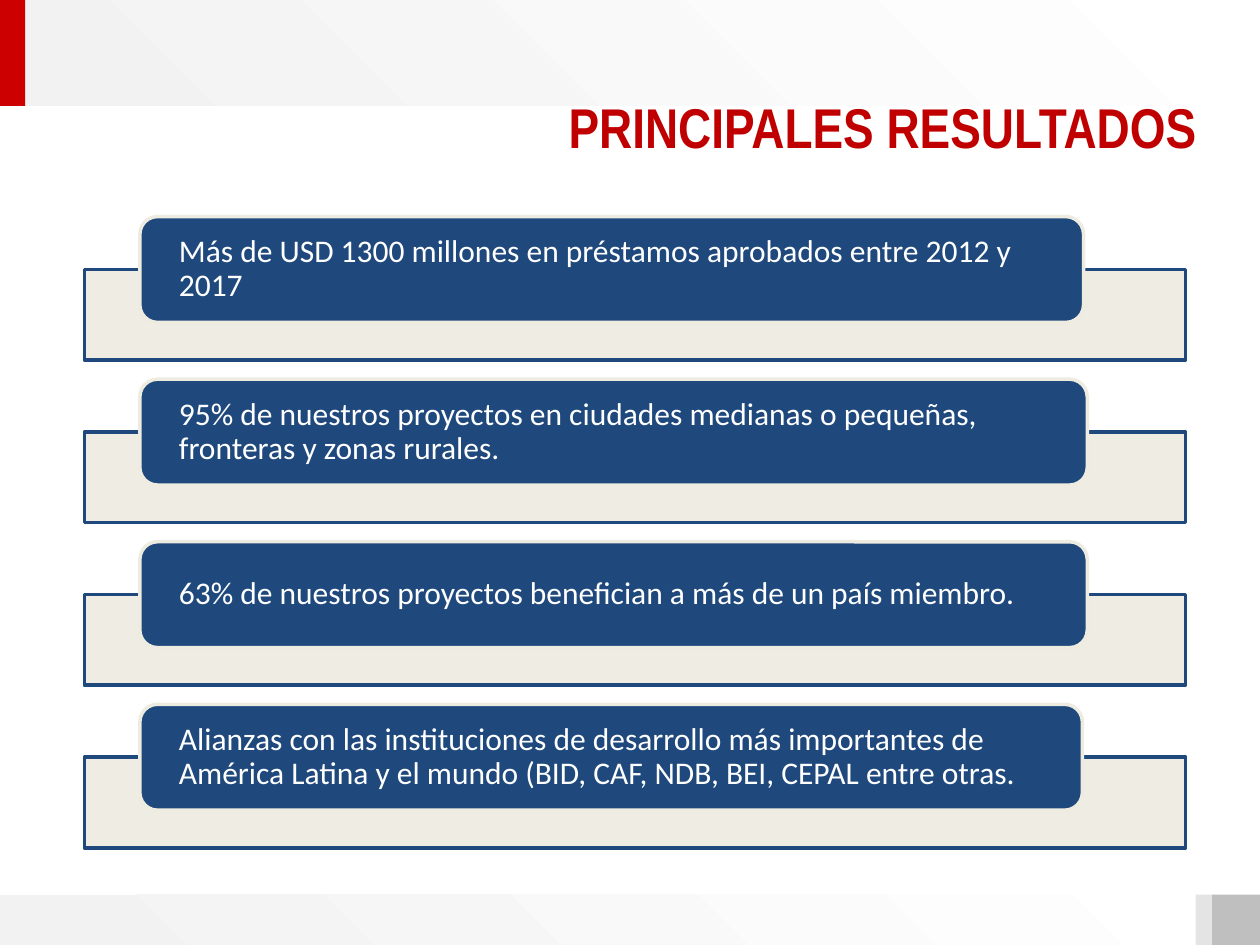
from lxml import etree
from pptx import Presentation
from pptx.dml.color import RGBColor
from pptx.enum.shapes import MSO_SHAPE
from pptx.enum.text import MSO_ANCHOR, MSO_AUTO_SIZE, PP_ALIGN
from pptx.oxml.ns import qn
from pptx.util import Pt

RECTANGLE, ROUNDED = MSO_SHAPE.RECTANGLE, MSO_SHAPE.ROUNDED_RECTANGLE
TITLE_ONLY = 5

COLORS = {
    "white": "FFFFFF", "pale": "F2F2F2", "red": "CC0000", "title": "C00000",
    "gray": "BFBFBF", "light_gray": "E4E4E4", "navy": "1F497D", "cream": "EEECE1",
}

# Content: result text and width of its card
TITLE = "PRINCIPALES RESULTADOS"
RESULTS = [
    ("Más de USD 1300 millones en préstamos aprobados entre 2012 y 2017", 539.3),
    ("95% de nuestros proyectos en ciudades medianas o pequeñas, fronteras y zonas rurales.", 541.4),
    ("63% de nuestros proyectos benefician a más de un país miembro.", 541.4),
    ("Alianzas con las instituciones de desarrollo más importantes de América Latina y el mundo "
     "(BID, CAF, NDB, BEI, CEPAL entre otras.", 538.6),
]

# Bands: left, top, width, height, fill (None is the pale gradient)
BANDS = [
    (13.7, 0, 706.3, 60.5, None),
    (-0.7, 0, 15.1, 60.5, "red"),
    (0, 511.2, 720, 28.8, None),
    (692.6, 511.2, 27.4, 28.8, "gray"),
    (683.3, 511.2, 9.3, 28.8, "light_gray"),
]

# Layout of the result rows
FIRST_TOP, ROW_STEP = 123.8, 92.9
CARD_LEFT, CARD_HEIGHT, CARD_INSET = 79.9, 60.5, 19.4
PANEL_LEFT, PANEL_DROP, PANEL_WIDTH, PANEL_HEIGHT = 48.2, 30.2, 629.3, 51.8


def color(name):
    return RGBColor.from_string(COLORS[name])


def add_box(slide, kind, left, top, width, height, fill=None, line=None):
    shape = slide.shapes.add_shape(kind, Pt(left), Pt(top), Pt(width), Pt(height))
    shape.shadow.inherit = False
    if fill:
        shape.fill.solid()
        shape.fill.fore_color.rgb = color(fill)
    else:
        shape.fill.gradient()
        shape.fill.gradient_angle = 45
        for stop, name in zip(shape.fill.gradient_stops, ("pale", "white")):
            stop.color.rgb = color(name)
    if line:
        shape.line.color.rgb = color(line)
        shape.line.width = Pt(2)
    else:
        shape.line.fill.background()
    return shape


def set_opacity(shape, percent):
    fill_color = shape.fill._xPr.find(qn("a:solidFill"))[0]
    etree.SubElement(fill_color, qn("a:alpha")).set("val", str(percent * 1000))


def add_text(paragraph, text, font_name, size, color_name, bold=False):
    run = paragraph.add_run()
    run.text = text
    run.font.name = font_name
    run.font.size = Pt(size)
    run.font.bold = bold
    run.font.color.rgb = color(color_name)


def add_title(slide):
    title = slide.shapes.title
    title.left, title.top, title.width, title.height = Pt(28.8), Pt(49), Pt(662.4), Pt(42.5)
    frame = title.text_frame
    frame.auto_size = MSO_AUTO_SIZE.NONE
    frame.vertical_anchor = MSO_ANCHOR.TOP
    paragraph = frame.paragraphs[0]
    paragraph.alignment = PP_ALIGN.RIGHT
    add_text(paragraph, TITLE, "Arial Narrow", 32, "title", bold=True)


def add_result(slide, top, text, width):
    panel = add_box(slide, RECTANGLE, PANEL_LEFT, top + PANEL_DROP,
                    PANEL_WIDTH, PANEL_HEIGHT, "cream", "navy")
    set_opacity(panel, 90)
    card = add_box(slide, ROUNDED, CARD_LEFT, top, width, CARD_HEIGHT, "navy", "cream")
    frame = card.text_frame
    frame.word_wrap = True
    frame.vertical_anchor = MSO_ANCHOR.MIDDLE
    frame.margin_left = frame.margin_right = Pt(CARD_INSET)
    frame.margin_top = frame.margin_bottom = 0
    paragraph = frame.paragraphs[0]
    paragraph.alignment = PP_ALIGN.LEFT
    paragraph.line_spacing = 0.9
    add_text(paragraph, text, "Calibri", 18, "white")


def main():
    presentation = Presentation()
    presentation.slide_width, presentation.slide_height = Pt(720), Pt(540)
    slide = presentation.slides.add_slide(presentation.slide_layouts[TITLE_ONLY])

    # Header and footer bands
    for left, top, width, height, fill in BANDS:
        add_box(slide, RECTANGLE, left, top, width, height, fill)

    # Title, raised above the bands
    add_title(slide)
    slide.shapes._spTree.append(slide.shapes.title._element)

    # Result rows
    for index, (text, width) in enumerate(RESULTS):
        add_result(slide, FIRST_TOP + index * ROW_STEP, text, width)

    presentation.save("out.pptx")


if __name__ == "__main__":
    main()
